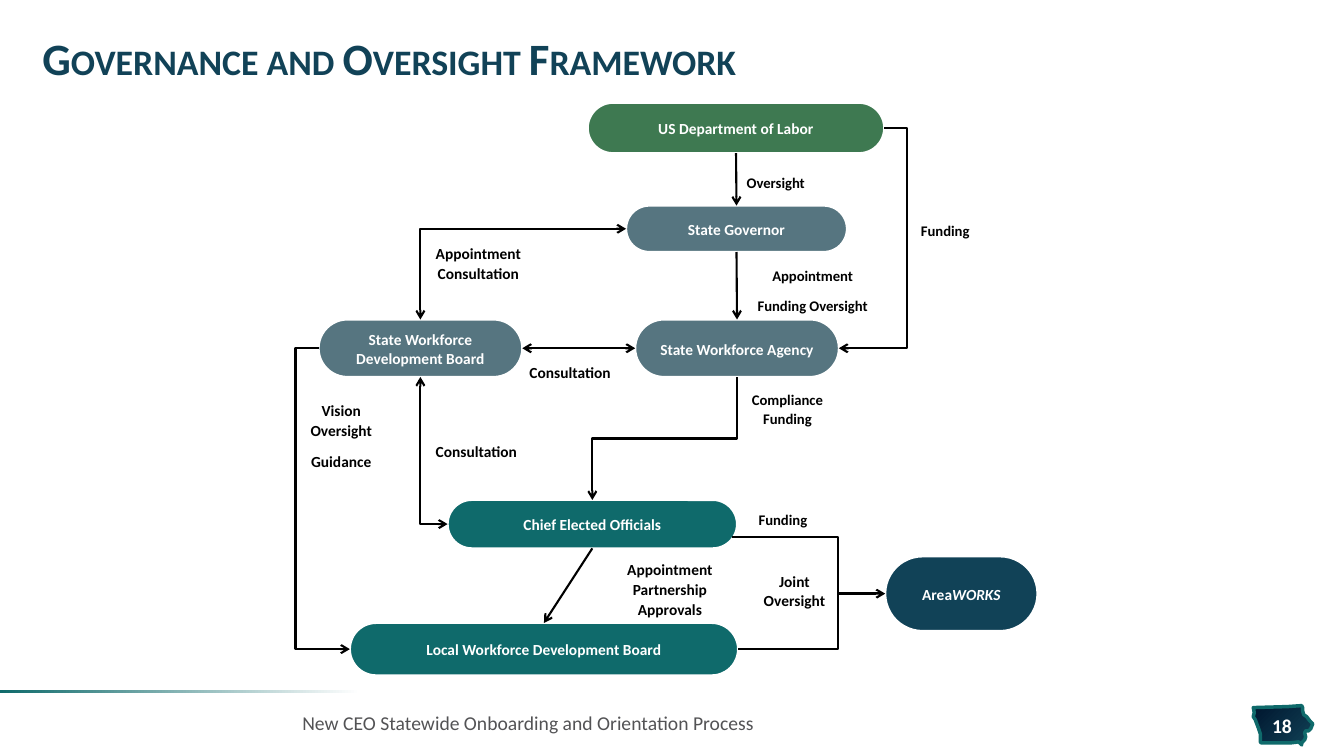
from lxml.etree import SubElement
from pptx import Presentation
from pptx.dml.color import RGBColor
from pptx.enum.shapes import MSO_CONNECTOR, MSO_SHAPE
from pptx.enum.text import MSO_ANCHOR, PP_ALIGN
from pptx.oxml.ns import qn
from pptx.util import Inches, Pt

COLORS = {
    "navy": "114257", "midnight": "00162E", "green": "3E7951", "slate": "567580",
    "teal": "0F6A6B", "white": "FFFFFF", "black": "000000", "gray": "535355",
}
TOP, LEFT, BOTTOM, RIGHT = range(4)
STATE_OUTLINE = [
    (12.91, 7), (12.77, 7.01), (12.43, 7.02), (12.44, 7.07), (12.43, 7.11), (12.45, 7.14),
    (12.48, 7.22), (12.5, 7.28), (12.5, 7.36), (12.51, 7.37), (12.8, 7.37), (12.88, 7.36),
    (12.91, 7.39), (12.91, 7.37), (12.94, 7.34), (12.95, 7.31), (12.94, 7.27), (12.95, 7.25),
    (12.98, 7.25), (13, 7.23), (13.02, 7.18), (12.99, 7.15), (12.96, 7.11), (12.93, 7.09),
    (12.92, 7.05), (12.92, 7.02),
]


def rgb(color):
    return RGBColor.from_string(COLORS[color])


def apply(target, values):
    for name, value in values.items():
        setattr(target, name, value)


class FrameworkSlide:
    font = {"name": "Calibri", "bold": True}
    zero_insets = {"margin_left": 0, "margin_right": 0, "margin_top": 0, "margin_bottom": 0}
    centered = {"alignment": PP_ALIGN.CENTER, "line_spacing": 1.07}

    def __init__(self, presentation):
        self.slide = presentation.slides.add_slide(presentation.slide_layouts[5])
        self.shapes = self.slide.shapes

    def run(self, paragraph, text, color, size, **font):
        run = paragraph.add_run()
        run.text = text
        apply(run.font, {**self.font, "size": Pt(size), **font})
        run.font.color.rgb = rgb(color)
        return run

    def title(self, text, box):
        title = self.shapes.title
        apply(title, dict(zip(("left", "top", "width", "height"), map(Inches, box))))
        title.text_frame.vertical_anchor = MSO_ANCHOR.MIDDLE
        paragraph = title.text_frame.paragraphs[0]
        apply(paragraph, {"alignment": PP_ALIGN.LEFT, "line_spacing": 0.85})
        run = self.run(paragraph, text, "navy", 32)
        run.font._element.set("cap", "small")

    def gradient(self, shape, angle, stops):
        shape.shadow.inherit = False
        shape.fill.gradient()
        shape.fill.gradient_angle = angle
        for stop, (position, color) in zip(shape.fill.gradient_stops, stops):
            stop.position = position
            stop.color.rgb = rgb(color)

    def footer_rule(self, box):
        rule = self.shapes.add_shape(MSO_SHAPE.RECTANGLE, *map(Inches, box))
        self.gradient(rule, 180, [(0.06, "white"), (1, "teal")])
        rule.line.fill.background()

    def state_badge(self, points):
        corners = [(Inches(x), Inches(y)) for x, y in points]
        builder = self.shapes.build_freeform(*corners[0])
        builder.add_line_segments(corners[1:], close=True)
        badge = builder.convert_to_shape()
        self.gradient(badge, 315, [(0, "midnight"), (1, "navy")])
        badge.line.color.rgb = rgb("teal")
        badge.line.width = Pt(2.5)

    def node(self, parts, box, color):
        node = self.shapes.add_shape(MSO_SHAPE.ROUNDED_RECTANGLE, *map(Inches, box))
        node.adjustments[0] = 0.5
        node.shadow.inherit = False
        node.fill.solid()
        node.fill.fore_color.rgb = rgb(color)
        node.line.color.rgb = rgb("white")
        node.line.width = Pt(1.5)
        frame = node.text_frame
        apply(frame, {**self.zero_insets, "word_wrap": True, "vertical_anchor": MSO_ANCHOR.MIDDLE})
        paragraph = frame.paragraphs[0]
        apply(paragraph, self.centered)
        for text, italic in parts:
            self.run(paragraph, text, "white", 11, italic=italic)
        return node

    def label(self, lines, box, size=11, color="black", gap=0, frame_format=None,
              paragraph_format=None, **font):
        frame = self.shapes.add_textbox(*map(Inches, box)).text_frame
        apply(frame, {"word_wrap": True, **(frame_format or {})})
        for index, line in enumerate(lines):
            paragraph = frame.add_paragraph() if index else frame.paragraphs[0]
            apply(paragraph, {**self.centered, "space_after": Pt(gap), **(paragraph_format or {})})
            self.run(paragraph, line, color, size, **font)

    def site(self, shape, side):
        across = {LEFT: 0, RIGHT: 1}.get(side, 0.5)
        down = {TOP: 0, BOTTOM: 1}.get(side, 0.5)
        return (shape.left.inches + shape.width.inches * across,
                shape.top.inches + shape.height.inches * down)

    def connector(self, kind, begin, end, arrows):
        connector = self.shapes.add_connector(kind, *map(Inches, begin + end))
        connector.line.color.rgb = rgb("black")
        connector.line.width = Pt(1.5)
        properties = connector._element.spPr
        for arrow in arrows:
            SubElement(properties.find(qn("a:ln")), qn(f"a:{arrow}End"), type="arrow")
        SubElement(properties, qn("a:effectLst"))
        return connector

    def straight(self, begin, end, arrows=("tail",)):
        connector = self.connector(
            MSO_CONNECTOR.STRAIGHT, self.site(*begin), self.site(*end), arrows)
        connector.begin_connect(*begin)
        connector.end_connect(*end)

    def elbow(self, begin, end, bend, arrows=("tail",)):
        connector = self.connector(MSO_CONNECTOR.ELBOW, begin, end, arrows)
        ratio = (bend - begin[0]) / (end[0] - begin[0])
        guides = connector._element.spPr.find(qn("a:prstGeom")).find(qn("a:avLst"))
        SubElement(guides, qn("a:gd"), name="adj1", fmla=f"val {round(ratio * 100000)}")

    def corner(self, begin, end):
        connector = self.connector(MSO_CONNECTOR.ELBOW, begin, end, ("head", "tail"))
        connector._element.spPr.find(qn("a:prstGeom")).set("prst", "bentConnector2")

    def downward_elbow(self, begin, end):
        middle_x, middle_y = (begin[0] + end[0]) / 2, (begin[1] + end[1]) / 2
        half_width, half_height = (end[1] - begin[1]) / 2, (begin[0] - end[0]) / 2
        connector = self.connector(
            MSO_CONNECTOR.ELBOW, (middle_x - half_width, middle_y - half_height),
            (middle_x + half_width, middle_y + half_height), ("tail",))
        connector._element.spPr.find(qn("a:xfrm")).set("rot", "5400000")


def main():
    presentation = Presentation()
    presentation.slide_width = Inches(13.33)
    presentation.slide_height = Inches(7.5)
    page = FrameworkSlide(presentation)

    page.state_badge(STATE_OUTLINE)
    page.footer_rule((0, 6.85, 3.8, 0.03))
    middle = {"vertical_anchor": MSO_ANCHOR.MIDDLE}
    page.label(["18"], (12.46, 7.08, 0.51, 0.23), 14, "white",
               frame_format={**middle, "margin_left": 0, "margin_right": 0},
               paragraph_format={"line_spacing": 1})
    page.title("Governance and Oversight Framework", (0.32, 0.24, 12.69, 0.75))

    labor = page.node([("US Department of Labor", False)], (5.83, 1.02, 2.94, 0.5), "green")
    governor = page.node([("State Governor", False)], (6.21, 2.04, 2.19, 0.46), "slate")
    state_board = page.node(
        [("State Workforce Development Board", False)], (3.16, 3.17, 2.02, 0.57), "slate")
    agency = page.node([("State Workforce Agency", False)], (6.3, 3.17, 2.02, 0.57), "slate")
    officials = page.node([("Chief Elected Officials", False)], (4.44, 4.96, 2.87, 0.48), "teal")
    local_board = page.node(
        [("Local Workforce Development Board", False)], (3.47, 6.18, 3.85, 0.52), "teal")
    centers = page.node([("Area", False), ("WORKS", True)], (8.78, 5.52, 1.51, 0.74), "navy")

    page.straight((labor, BOTTOM), (governor, TOP))
    page.straight((governor, BOTTOM), (agency, TOP))
    page.straight((state_board, RIGHT), (agency, LEFT), ("head", "tail"))
    page.straight((officials, BOTTOM), (local_board, TOP))
    page.elbow(page.site(state_board, LEFT), page.site(local_board, LEFT), 2.93)
    page.elbow(page.site(labor, RIGHT), page.site(agency, RIGHT), 9)
    page.elbow((7.26, 5.33), page.site(centers, LEFT), 8.31)
    page.elbow(page.site(local_board, RIGHT), (8.76, 5.88), 8.31, ())
    page.corner(page.site(governor, LEFT), page.site(state_board, TOP))
    page.corner(page.site(officials, LEFT), page.site(state_board, BOTTOM))
    page.downward_elbow(page.site(agency, BOTTOM), page.site(officials, TOP))

    for lines, box, size, gap in [
        (["Appointment", "Consultation"], (3.58, 2.36, 2.33, 0.57), 11, 0),
        (["Appointment", "Partnership", "Approvals"], (6.03, 5.5, 1.23, 0.74), 11, 0),
        (["Vision Oversight", "Guidance"], (2.91, 3.92, 0.95, 0.86), 11, 8),
        (["Consultation"], (4.13, 4.32, 1.19, 0.38), 11, 0),
        (["Consultation"], (5.06, 3.54, 1.19, 0.38), 11, 0),
        (["Joint", "Oversight"], (7.4, 5.61, 0.96, 0.59), 11, 0),
        (["Oversight"], (7.18, 1.66, 1.03, 0.38), 10.5, 0),
        (["Appointment", "Funding Oversight"], (7.32, 2.59, 1.48, 0.66), 10.5, 8),
        (["Compliance", "Funding"], (6.59, 3.82, 2.44, 0.56), 10.5, 0),
        (["Funding"], (7.07, 5.01, 1.39, 0.37), 10.5, 0),
        (["Funding"], (8.68, 2.14, 1.39, 0.37), 10.5, 0),
    ]:
        page.label(lines, box, size, gap=gap)

    page.label(["New CEO Statewide Onboarding and Orientation Process"],
               (2.9, 6.97, 9.06, 0.4), 14, "gray", frame_format=middle, bold=False,
               paragraph_format={"alignment": PP_ALIGN.LEFT, "line_spacing": 1})
    presentation.save("out.pptx")


if __name__ == "__main__":
    main()
